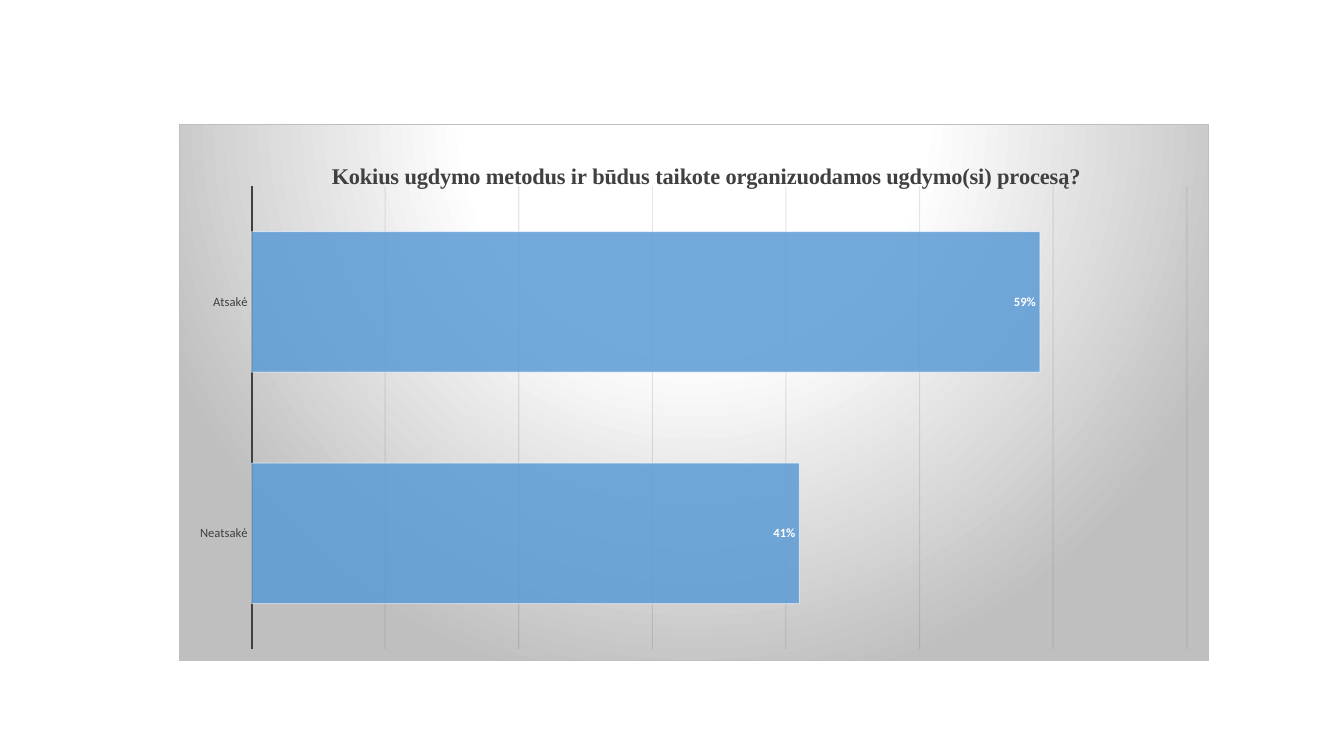
from dataclasses import dataclass

from pptx import Presentation
from pptx import util as u
from pptx.chart.chart import Chart
from pptx.chart.data import CategoryChartData
from pptx.dml.color import RGBColor
from pptx.enum import chart as ch
from pptx.oxml import parse_xml
from pptx.oxml.ns import nsdecls
from pptx.text.text import Font

SCALE = 914400 / 100.8


def px(length: int) -> int:
    return round(length * SCALE)


@dataclass(frozen=True)
class Theme:
    bar: str = "5B9BD5"
    white: str = "FFFFFF"
    ink: str = "404040"
    grid: str = "0D0D0D"
    edge: str = "BFBFBF"
    body_font: str = "Calibri"
    title_font: str = "Times New Roman"
    title_size: int = 16
    body_size: int = 10
    label_size: int = 9
    hairline: float = 0.75
    axis_line: float = 1.5


@dataclass(frozen=True)
class Box:
    left: int
    top: int
    width: int
    height: int


@dataclass(frozen=True)
class Answer:
    label: str
    share: float


THEME = Theme()
SLIDE = Box(0, 0, 1344, 756)
FRAME = Box(179, 124, 1030, 537)
PLOT = Box(72, 62, 936, 464)
TITLE = Box(148, 34, 748, 26)
QUESTION = "Kokius ugdymo metodus ir būdus taikote organizuodamos ugdymo(si) procesą?"
ANSWERS = [Answer("Neatsakė", 0.41), Answer("Atsakė", 0.59)]


def style_font(font: Font, name: str, size: int, color: str, bold: bool = False) -> None:
    font.name = name
    font.size = u.Pt(size)
    font.bold = bold
    font.color.rgb = RGBColor.from_string(color)


def style_line(line, color: str, width: float) -> None:
    line.color.rgb = RGBColor.from_string(color)
    line.width = u.Pt(width)


def set_opacity(chart: Chart, owner: str, percent: int) -> None:
    for color in chart.element.xpath(f".//{owner}/a:solidFill/a:srgbClr"):
        color.append(parse_xml(f'<a:alpha {nsdecls("a")} val="{percent * 1000}"/>'))


def place(parent, box: Box, index: int, inner: bool) -> None:
    for layout in parent.xpath("c:layout"):
        parent.remove(layout)
    target = '<c:layoutTarget val="inner"/>' if inner else ""
    size = (
        f'<c:w val="{box.width / FRAME.width:.3f}"/><c:h val="{box.height / FRAME.height:.3f}"/>'
        if inner
        else ""
    )
    parent.insert(index, parse_xml(
        f'<c:layout {nsdecls("c")}><c:manualLayout>{target}'
        '<c:xMode val="edge"/><c:yMode val="edge"/>'
        f'<c:x val="{box.left / FRAME.width:.3f}"/><c:y val="{box.top / FRAME.height:.3f}"/>'
        f'{size}</c:manualLayout></c:layout>'
    ))


def fill_background(chart: Chart) -> None:
    stops = "".join(
        f'<a:gs pos="{position * 1000}"><a:srgbClr val="{color}"/></a:gs>'
        for position, color in ((0, THEME.white), (39, THEME.white), (100, THEME.edge))
    )
    chart.element.xpath("c:chart")[0].addnext(parse_xml(
        f'<c:spPr {nsdecls("c", "a")}><a:gradFill><a:gsLst>{stops}</a:gsLst>'
        '<a:path path="circle"><a:fillToRect l="50000" t="-80000" r="50000" b="180000"/></a:path>'
        f'</a:gradFill><a:ln w="{u.Pt(THEME.hairline)}"><a:solidFill>'
        f'<a:srgbClr val="{THEME.edge}"/></a:solidFill></a:ln></c:spPr>'
    ))


def style_title(chart: Chart) -> None:
    frame = chart.chart_title.text_frame
    frame.text = QUESTION
    style_font(frame.paragraphs[0].runs[0].font, THEME.title_font, THEME.title_size, THEME.ink, True)
    place(chart.element.xpath("c:chart/c:title")[0], TITLE, 1, False)


def style_axes(chart: Chart) -> None:
    categories = chart.category_axis
    categories.major_tick_mark = ch.XL_TICK_MARK.NONE
    categories.minor_tick_mark = ch.XL_TICK_MARK.NONE
    style_font(categories.tick_labels.font, THEME.body_font, THEME.label_size, THEME.ink)
    style_line(categories.format.line, THEME.ink, THEME.axis_line)
    values = chart.value_axis
    values.visible = False
    values.minimum_scale, values.maximum_scale, values.major_unit = 0, 0.7, 0.1
    values.has_major_gridlines = True
    style_line(values.major_gridlines.format.line, THEME.grid, THEME.hairline)
    set_opacity(chart, "c:majorGridlines/c:spPr/a:ln", 10)


def style_bars(chart: Chart) -> None:
    plot = chart.plots[0]
    plot.gap_width = 65
    plot.vary_by_categories = False
    series = plot.series[0]
    series.format.fill.solid()
    series.format.fill.fore_color.rgb = RGBColor.from_string(THEME.bar)
    style_line(series.format.line, THEME.white, THEME.hairline)
    set_opacity(chart, "c:ser/c:spPr", 85)
    set_opacity(chart, "c:ser/c:spPr/a:ln", 50)
    labels = series.data_labels
    labels.show_value = True
    labels.position = ch.XL_LABEL_POSITION.INSIDE_END
    labels.number_format = "0%"
    labels.number_format_is_linked = False
    style_font(labels.font, THEME.body_font, THEME.label_size, THEME.white, True)


def main() -> None:
    presentation = Presentation()
    presentation.slide_width = px(SLIDE.width)
    presentation.slide_height = px(SLIDE.height)
    slide = presentation.slides.add_slide(presentation.slide_layouts[6])
    data = CategoryChartData(number_format="0%")
    data.categories = [answer.label for answer in ANSWERS]
    data.add_series("Series 1", [answer.share for answer in ANSWERS])
    chart = slide.shapes.add_chart(
        ch.XL_CHART_TYPE.BAR_CLUSTERED,
        px(FRAME.left), px(FRAME.top), px(FRAME.width), px(FRAME.height), data,
    ).chart
    chart.has_legend = False
    style_font(chart.font, THEME.body_font, THEME.body_size, "000000")
    style_title(chart)
    style_axes(chart)
    style_bars(chart)
    place(chart.element.xpath("c:chart/c:plotArea")[0], PLOT, 0, True)
    fill_background(chart)
    presentation.save("out.pptx")


if __name__ == "__main__":
    main()
